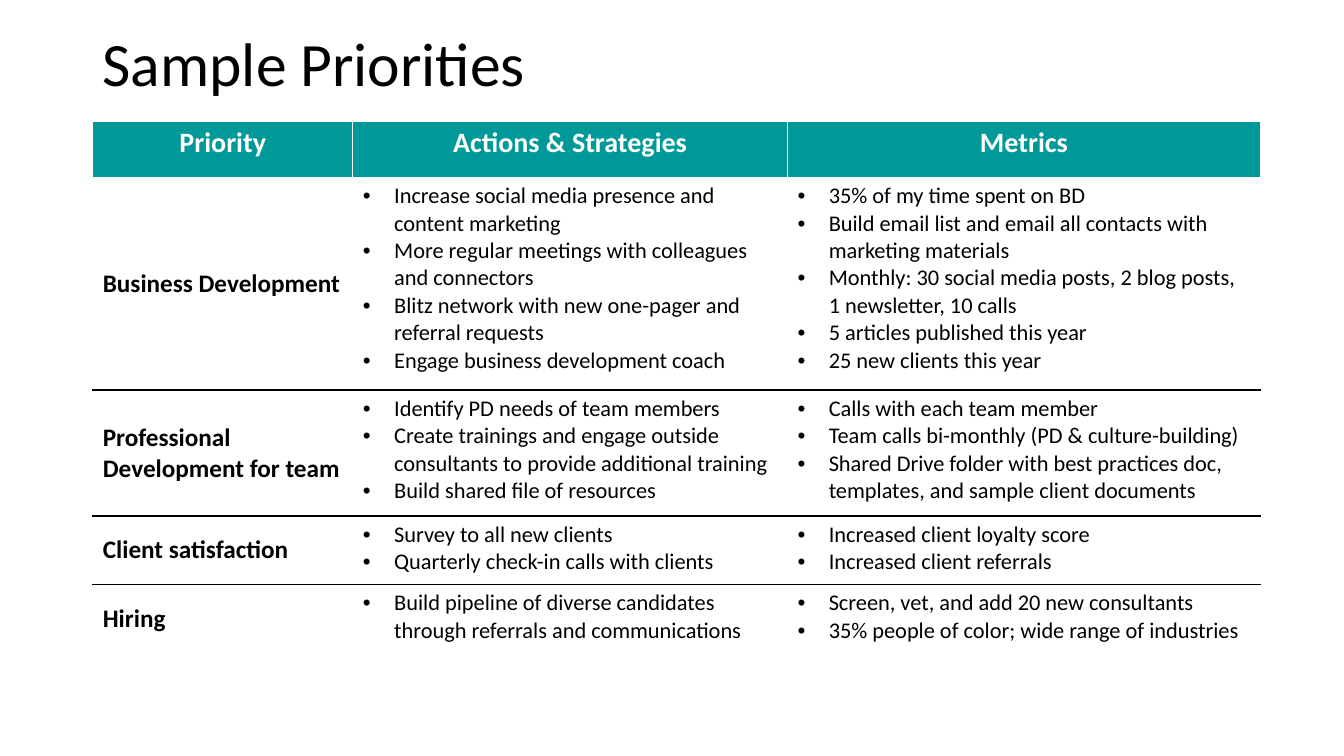
from pptx import Presentation
from pptx.dml.color import RGBColor
from pptx.enum.text import MSO_ANCHOR, PP_ALIGN
from pptx.oxml.ns import qn
from pptx.util import Inches, Pt
from lxml.etree import SubElement

TITLE = "Sample Priorities"
HEADERS = ["Priority", "Actions & Strategies", "Metrics"]
PRIORITIES = [
    ("Business Development",
     ["Increase social media presence and content marketing",
      "More regular meetings with colleagues and connectors",
      "Blitz network with new one-pager and referral requests",
      "Engage business development coach"],
     ["35% of my time spent on BD",
      "Build email list and email all contacts with marketing materials",
      "Monthly: 30 social media posts, 2 blog posts, 1 newsletter, 10 calls",
      "5 articles published this year",
      "25 new clients this year"]),
    ("Professional Development for team",
     ["Identify PD needs of team members",
      "Create trainings and engage outside consultants to provide additional training",
      "Build shared file of resources"],
     ["Calls with each team member",
      "Team calls bi-monthly (PD & culture-building)",
      "Shared Drive folder with best practices doc, templates, and sample client documents"]),
    ("Client satisfaction",
     ["Survey to all new clients",
      "Quarterly check-in calls with clients"],
     ["Increased client loyalty score",
      "Increased client referrals"]),
    ("Hiring",
     ["Build pipeline of diverse candidates through referrals and communications"],
     ["Screen, vet, and add 20 new consultants",
      "35% people of color; wide range of industries"]),
]

COLUMN_WIDTHS = [2.58, 4.31, 4.69]
ROW_HEIGHTS = [0.56, 2.11, 1.25, 0.68, 0.68]
LEFT, TABLE_TOP = 0.92, 1.2
BULLET_INDENT = Inches(0.31)

FONT = "Calibri"
BLACK = RGBColor(0x00, 0x00, 0x00)
WHITE = RGBColor(0xFF, 0xFF, 0xFF)
TEAL = RGBColor(0x00, 0x99, 0x99)


def write(frame, lines, size, color=BLACK, bold=False, align=PP_ALIGN.LEFT,
          bullet=False, spacing=None):
    """Fill a text frame with one paragraph per line."""
    frame.word_wrap = True
    for index, line in enumerate(lines):
        para = frame.paragraphs[0] if index == 0 else frame.add_paragraph()
        para.alignment = align
        if spacing:
            para.line_spacing = spacing
        if bullet:
            properties = para._p.get_or_add_pPr()
            properties.set("marL", str(BULLET_INDENT))
            properties.set("indent", str(-BULLET_INDENT))
            SubElement(properties, qn("a:buFont"), typeface="Arial")
            SubElement(properties, qn("a:buChar"), char="•")
        span = para.add_run()
        span.text = line
        font = span.font
        font.name, font.size, font.bold = FONT, Pt(size), bold
        font.color.rgb = color


def style_cell(cell, fill, top, bottom):
    """Set the borders, which must precede the fill, and then the fill."""
    properties = cell._tc.get_or_add_tcPr()
    for side, color in (("L", WHITE), ("R", WHITE), ("T", top), ("B", bottom)):
        line = SubElement(properties, qn(f"a:ln{side}"), w=str(Pt(1)))
        solid = SubElement(line, qn("a:solidFill"))
        SubElement(solid, qn("a:srgbClr"), val=str(color))
    cell.fill.solid()
    cell.fill.fore_color.rgb = fill


def add_title(page):
    box = page.shapes.add_textbox(Inches(LEFT), Inches(0.2), Inches(11.5), Inches(0.92))
    box.text_frame.vertical_anchor = MSO_ANCHOR.MIDDLE
    write(box.text_frame, [TITLE], 44, spacing=0.9)


def add_priority_table(page):
    table = page.shapes.add_table(
        len(ROW_HEIGHTS), len(COLUMN_WIDTHS), Inches(LEFT), Inches(TABLE_TOP),
        Inches(sum(COLUMN_WIDTHS)), Inches(sum(ROW_HEIGHTS))).table
    table.horz_banding = False
    for column, width in zip(table.columns, COLUMN_WIDTHS):
        column.width = Inches(width)
    for row, height in zip(table.rows, ROW_HEIGHTS):
        row.height = Inches(height)

    for cell, header in zip(table.rows[0].cells, HEADERS):
        style_cell(cell, TEAL, WHITE, WHITE)
        write(cell.text_frame, [header], 20, WHITE, bold=True, align=PP_ALIGN.CENTER)

    last = len(PRIORITIES)
    for number, (priority, *lists) in enumerate(PRIORITIES, start=1):
        name_cell, *list_cells = table.rows[number].cells
        for cell in (name_cell, *list_cells):
            style_cell(cell, WHITE, top=WHITE if number == 1 else BLACK,
                       bottom=WHITE if number == last else BLACK)
        name_cell.vertical_anchor = MSO_ANCHOR.MIDDLE
        write(name_cell.text_frame, [priority], 18, bold=True)
        for cell, lines in zip(list_cells, lists):
            write(cell.text_frame, lines, 16, bullet=True)


def main():
    deck = Presentation()
    deck.slide_width, deck.slide_height = Inches(13.33), Inches(7.5)
    page = deck.slides.add_slide(deck.slide_layouts[6])
    add_title(page)
    add_priority_table(page)
    deck.save("out.pptx")


if __name__ == "__main__":
    main()
